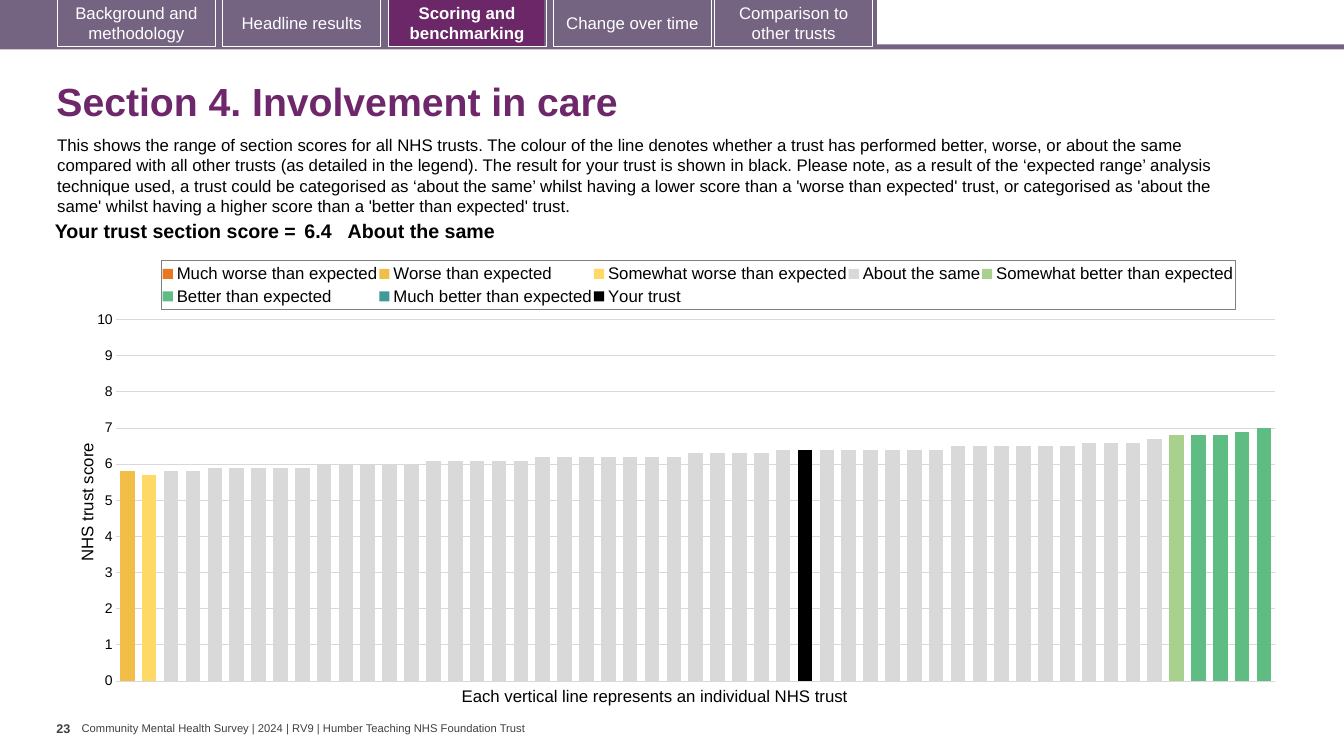
from copy import deepcopy
from dataclasses import dataclass

from lxml import etree
from pptx import Presentation
from pptx.chart.data import CategoryChartData
from pptx.dml.color import RGBColor
from pptx.enum.chart import XL_CHART_TYPE, XL_LEGEND_POSITION, XL_TICK_LABEL_POSITION, XL_TICK_MARK
from pptx.enum.shapes import MSO_SHAPE
from pptx.enum.text import MSO_ANCHOR, MSO_AUTO_SIZE, PP_ALIGN
from pptx.oxml import parse_xml
from pptx.oxml.ns import nsdecls, qn
from pptx.util import Pt

RECTANGLE = MSO_SHAPE.RECTANGLE
COLUMNS = XL_CHART_TYPE.COLUMN_CLUSTERED
TOP, MIDDLE = MSO_ANCHOR.TOP, MSO_ANCHOR.MIDDLE
LEFT, CENTER, RIGHT = PP_ALIGN.LEFT, PP_ALIGN.CENTER, PP_ALIGN.RIGHT
NO_TICK = XL_TICK_MARK.NONE
MUTED, PLUM, WHITE, BLACK, GREY = "756382", "6B2768", "FFFFFF", "000000", "404040"
TRUSTS = 53


@dataclass
class Block:
    left: float
    top: float
    width: float
    height: float
    fill: str | None = None
    line: str | None = None
    text: str = ""
    size: float = 12
    colour: str = BLACK
    bold: bool = False
    align: int = LEFT
    anchor: int = TOP
    wrap: bool = True
    insets: tuple = (7.2, 3.6, 7.2, 3.6)


@dataclass
class Band:
    name: str
    colour: str
    first: int = 0
    scores: tuple = ()

    def values(self) -> list:
        row = [None] * TRUSTS
        row[self.first:self.first + len(self.scores)] = self.scores
        return row


def rgb(colour: str) -> RGBColor:
    return RGBColor.from_string(colour)


def style_font(font, size: float, colour: str, bold: bool = False, name: str = "Arial") -> None:
    for key, value in {"name": name, "size": Pt(size), "bold": bold}.items():
        setattr(font, key, value)
    font.color.rgb = rgb(colour)


def fill_frame(frame, block: Block) -> None:
    left, top, right, bottom = block.insets
    values = {"margin_left": Pt(left), "margin_top": Pt(top), "margin_right": Pt(right),
              "margin_bottom": Pt(bottom), "word_wrap": block.wrap,
              "vertical_anchor": block.anchor, "auto_size": MSO_AUTO_SIZE.NONE}
    for key, value in values.items():
        setattr(frame, key, value)
    para = frame.paragraphs[0]
    para.alignment = block.align
    span = para.add_run()
    span.text = block.text
    style_font(span.font, block.size, block.colour, block.bold)


def place(block: Block) -> tuple:
    return Pt(block.left), Pt(block.top), Pt(block.width), Pt(block.height)


def draw_shape(page, block: Block) -> None:
    box = page.shapes.add_shape(RECTANGLE, *place(block))
    box.shadow.inherit = False
    if block.fill:
        box.fill.solid()
        box.fill.fore_color.rgb = rgb(block.fill)
    else:
        box.fill.background()
    if block.line:
        box.line.color.rgb = rgb(block.line)
        box.line.width = Pt(0.75)
    else:
        box.line.fill.background()
    if block.text:
        fill_frame(box.text_frame, block)


def draw_text(page, block: Block) -> None:
    fill_frame(page.shapes.add_textbox(*place(block)).text_frame, block)


def set_layout(parent, before, x: float, y: float, **sizes: float) -> None:
    """Give a chart part a fixed place, as fractions of the chart."""
    for old in parent.findall(qn("c:layout")):
        parent.remove(old)
    layout = parse_xml(f"<c:layout {nsdecls('c')}><c:manualLayout/></c:layout>")
    values = {"layoutTarget": "inner"} if parent.tag == qn("c:plotArea") else {}
    values |= {"xMode": "edge", "yMode": "edge", "x": x, "y": y} | sizes
    for key, value in values.items():
        etree.SubElement(layout[0], qn(f"c:{key}")).set("val", str(value))
    if before is None:
        parent.insert(0, layout)
    else:
        before.addnext(layout)


def move_last_to_right_axis(plot_area) -> None:
    first = plot_area.find(qn("c:barChart"))
    second = deepcopy(first)
    first.remove(first.findall(qn("c:ser"))[-1])
    for series in second.findall(qn("c:ser"))[:-1]:
        second.remove(series)
    first.addnext(second)
    axes = [deepcopy(plot_area.find(qn(f"c:{kind}"))) for kind in ("catAx", "valAx")]
    plot_area.find(qn("c:valAx")).addnext(axes[1])
    axes[1].addnext(axes[0])
    new_ids = {axis.find(qn("c:axId")).get("val"): str(9001 + i) for i, axis in enumerate(axes)}
    for part in (second, *axes):
        for link in part.iter(qn("c:axId"), qn("c:crossAx")):
            link.set("val", new_ids[link.get("val")])
    for tag in ("majorGridlines", "title"):
        axes[1].remove(axes[1].find(qn(f"c:{tag}")))
    for tag, value in {"axPos": "r", "majorTickMark": "out", "tickLblPos": "none", "crosses": "max"}.items():
        axes[1].find(qn(f"c:{tag}")).set("val", value)


def draw_chart(page, bands: list[Band]) -> None:
    data = CategoryChartData(number_format="0.0")
    data.categories = [str(i + 1) for i in range(TRUSTS)]
    for band in bands:
        data.add_series(band.name, band.values())
    chart = page.shapes.add_chart(COLUMNS, Pt(48.2), Pt(177.8), Pt(874.8), Pt(319.7), data).chart
    style_font(chart.font, 10, BLACK, name="Calibri")
    chart.has_title = False
    plot = chart.plots[0]
    for key, value in {"gap_width": 50, "overlap": 100, "vary_by_categories": False}.items():
        setattr(plot, key, value)
    for series, band in zip(plot.series, bands):
        series.format.fill.solid()
        series.format.fill.fore_color.rgb = rgb(band.colour)
    # Axes
    chart.category_axis.visible = False
    axis = chart.value_axis
    for key, value in {"minimum_scale": 0, "maximum_scale": 10, "major_unit": 1,
                       "major_tick_mark": NO_TICK, "minor_tick_mark": NO_TICK,
                       "tick_label_position": XL_TICK_LABEL_POSITION.NEXT_TO_AXIS}.items():
        setattr(axis, key, value)
    axis.format.line.fill.background()
    axis.major_gridlines.format.line.color.rgb = rgb("D9D9D9")
    axis.major_gridlines.format.line.width = Pt(0.75)
    style_font(axis.tick_labels.font, 10, BLACK)
    axis.tick_labels.number_format = "0"
    axis.tick_labels.number_format_is_linked = False
    para = axis.axis_title.text_frame.paragraphs[0]
    span = para.add_run()
    span.text = "NHS trust score"
    style_font(span.font, 12, BLACK)
    title = axis.axis_title._element
    set_layout(title, title.find(qn("c:tx")), 0.005, 0.427)
    # Legend
    chart.has_legend = True
    chart.legend.position = XL_LEGEND_POSITION.TOP
    chart.legend.include_in_layout = False
    style_font(chart.legend.font, 12, BLACK)
    legend = chart.legend._element
    set_layout(legend, legend.find(qn("c:legendPos")), 0.0765, 0.026, w=0.877, h=0.11)
    legend.find(qn("c:overlay")).addnext(parse_xml(
        f'<c:spPr {nsdecls("c", "a")}><a:ln w="9525"><a:solidFill>'
        '<a:srgbClr val="7F7F7F"/></a:solidFill></a:ln></c:spPr>'))
    plot_area = chart._chartSpace.find(f".//{qn('c:plotArea')}")
    set_layout(plot_area, None, 0.04, 0.158, w=0.946, h=0.808)
    move_last_to_right_axis(plot_area)


def draw_score(page) -> None:
    cells = [("Your trust section score =", 189.4, RIGHT, 2.9), ("6.4", 33.8, LEFT, 2.9),
             ("About the same", 618.5, LEFT, 0)]
    table = page.shapes.add_table(1, len(cells), Pt(25.2), Pt(154.8), Pt(841.7), Pt(22.3)).table
    table.first_row = table.horz_banding = False
    for i, (text, width, align, side) in enumerate(cells):
        table.columns[i].width = Pt(width)
        cell = table.cell(0, i)
        cell.fill.background()
        for key, value in {"margin_left": side, "margin_right": side,
                           "margin_top": 2.9, "margin_bottom": 2.9}.items():
            setattr(cell, key, Pt(value))
        para = cell.text_frame.paragraphs[0]
        para.alignment = align
        span = para.add_run()
        span.text = text
        style_font(span.font, 14, BLACK, True)


INTRO = (
    "This shows the range of section scores for all NHS trusts. The colour of the line denotes whether a trust "
    "has performed better, worse, or about the same compared with all other trusts (as detailed in the legend). "
    "The result for your trust is shown in black. Please note, as a result of the ‘expected range’ analysis "
    "technique used, a trust could be categorised as ‘about the same’ whilst having a lower score than a 'worse "
    "than expected' trust, or categorised as 'about the same' whilst having a higher score than a 'better than "
    "expected' trust.")
FOOTER = "Community Mental Health Survey | 2024 | RV9 | Humber Teaching NHS Foundation Trust"
TABS = [("Background and methodology", 41, MUTED), ("Headline results", 159.1, None),
        ("Scoring and benchmarking", 277.2, None), ("Change over time", 395.3, MUTED),
        ("Comparison to other trusts", 510.5, MUTED)]
SAME_COUNTS = {5.8: 2, 5.9: 5, 6: 5, 6.1: 5, 6.2: 7, 6.3: 4, 6.4: 8, 6.5: 6, 6.6: 3, 6.7: 1}
BANDS = [
    Band("Much worse than expected", "E87722"),
    Band("Worse than expected", "F1BE48", 0, (5.8,)),
    Band("Somewhat worse than expected", "FFD966", 1, (5.7,)),
    Band("About the same", "D9D9D9", 2, tuple(s for s, n in SAME_COUNTS.items() for _ in range(n))),
    Band("Somewhat better than expected", "A9D18E", 48, (6.8,)),
    Band("Better than expected", "5FBD83", 49, (6.8, 6.8, 6.9, 7)),
    Band("Much better than expected", "419999"),
    Band("Your trust", BLACK, 31, (6.4,))]


def main() -> None:
    deck = Presentation()
    deck.slide_width, deck.slide_height = Pt(960), Pt(540)
    page = deck.slides.add_slide(deck.slide_layouts[5])
    # Navigation bar
    for block in (Block(0, 31.7, 960, 3.6, MUTED), Block(0, 0, 626.4, 33.8, MUTED),
                  Block(277.9, 0, 110.9, 33.1, PLUM)):
        draw_shape(page, block)
    for text, left, fill in TABS:
        draw_shape(page, Block(left, -0.7, 113, 33.8, fill, WHITE, text, 12, WHITE,
                               text.startswith("Scoring"), CENTER, MIDDLE))
    # Title and introduction
    heading = Block(33.1, 48.2, 899.3, 51.8, text="Section 4. Involvement in care", size=28,
                    colour="6D276A", bold=True, anchor=MIDDLE)
    title = page.shapes.title
    title.left, title.top, title.width, title.height = place(heading)
    fill_frame(title.text_frame, heading)
    title.text_frame.paragraphs[0].line_spacing = 0.9
    draw_text(page, Block(33.8, 92.9, 873.4, 65.5, text=INTRO))
    # Scores
    draw_chart(page, BANDS)
    draw_score(page)
    draw_text(page, Block(322.6, 486, 295.9, 21.6, wrap=False,
                          text="Each vertical line represents an individual NHS trust"))
    # Footer
    draw_text(page, Block(40.3, 511.2, 18, 28.8, text="23", size=9, colour=GREY, bold=True,
                          wrap=False, insets=(0, 3.6, 0, 3.6)))
    draw_text(page, Block(58.3, 515.5, 322.6, 9.4, text=FOOTER, size=8, colour=GREY,
                          anchor=MIDDLE, wrap=False, insets=(0, 0, 0, 0)))
    deck.save("out.pptx")


if __name__ == "__main__":
    main()
